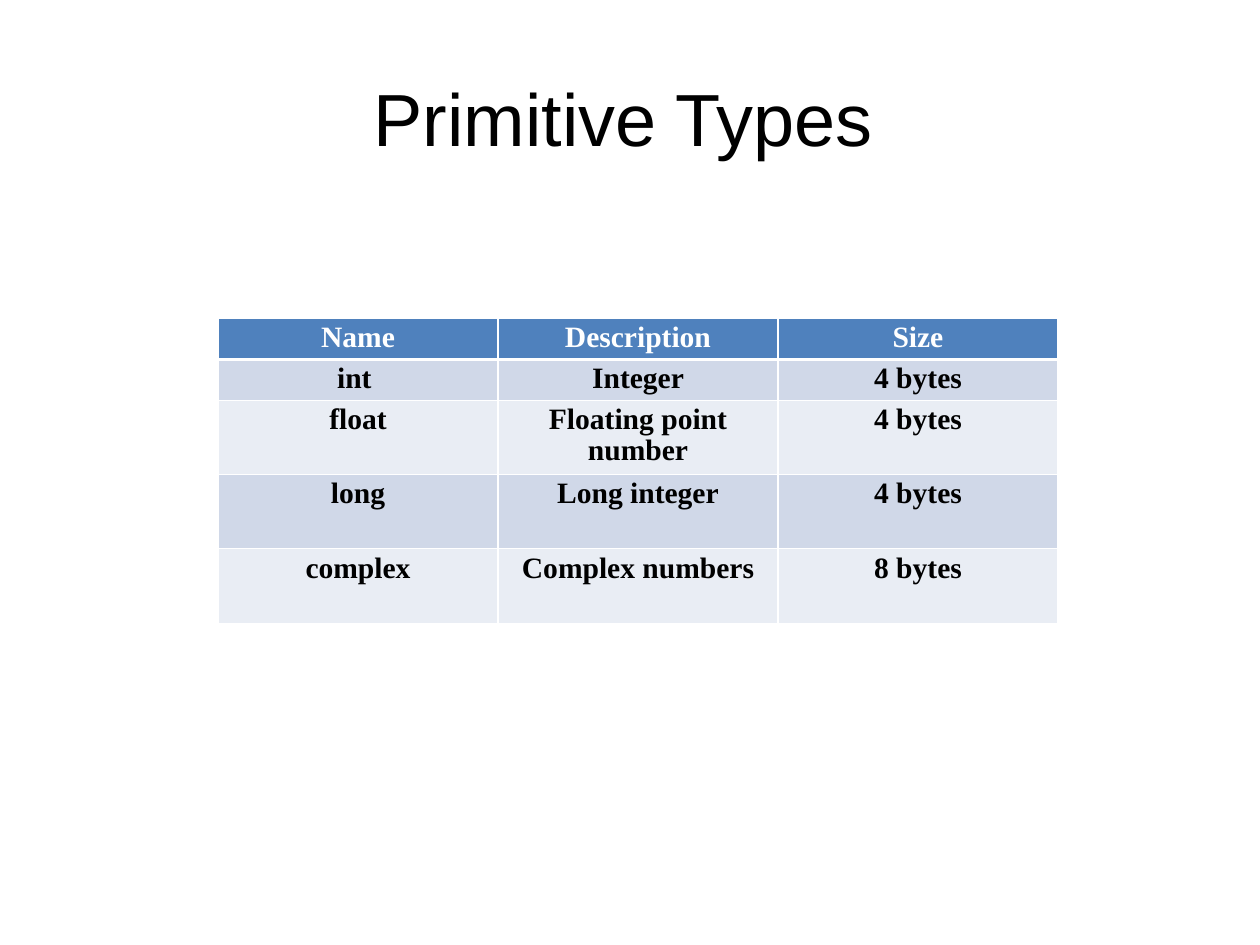
import pptx
import pptx.dml.color
import pptx.enum.text
import pptx.oxml
import pptx.oxml.ns
import pptx.util
from pptx.util import Cm

ROWS = [
    ("Name", "Description", "Size"),
    ("int ", "Integer", "4 bytes"),
    ("float", "Floating point number", "4 bytes"),
    ("long", "Long integer", "4 bytes"),
    ("complex", "Complex numbers", "8 bytes"),
]
ROW_HEIGHTS = [1.18, 1.18, 2.13, 2.13, 2.13]


def rgb(value):
    """Return the colour for a hex string."""
    return pptx.dml.color.RGBColor.from_string(value)


def write(tf, text, font="Times New Roman", size=24, color="000000", bold=False, spacing=None):
    """Fill a text frame with one centred, formatted paragraph."""
    p = tf.paragraphs[0]
    p.alignment = pptx.enum.text.PP_ALIGN.CENTER
    p.line_spacing = spacing
    r = p.add_run()
    r.text = text
    r.font.name = font
    r.font.size = pptx.util.Pt(size)
    r.font.bold = bold
    r.font.color.rgb = rgb(color)


def set_borders(cell, bottom=1, top=1):
    """Draw white borders round a cell, with widths in points."""
    tcPr = cell._tc.get_or_add_tcPr()
    widths = {"lnL": 1, "lnR": 1, "lnT": top, "lnB": bottom}
    for i, (tag, width) in enumerate(widths.items()):
        tcPr.insert(i, pptx.oxml.parse_xml(
            f'<a:{tag} {pptx.oxml.ns.nsdecls("a")} w="{pptx.util.Pt(width)}">'
            f'<a:solidFill><a:srgbClr val="FFFFFF"/></a:solidFill></a:{tag}>'))


def add_title(s, text, left, top, width, height):
    """Place the title placeholder in the given box."""
    sp = s.shapes.title
    sp.left, sp.top, sp.width, sp.height = left, top, width, height
    tf = sp.text_frame
    tf.word_wrap = True
    tf.vertical_anchor = pptx.enum.text.MSO_ANCHOR.MIDDLE
    write(tf, text, font="Arial", size=60)


def add_types_table(s, left, top, width, height):
    """Add the table of primitive types in the given box."""
    table = s.shapes.add_table(len(ROWS), len(ROWS[0]), left, top, width, height).table
    for row, row_height in zip(table.rows, ROW_HEIGHTS):
        row.height = Cm(row_height)
    for i, texts in enumerate(ROWS):
        header = i == 0
        fill = "4F81BD" if header else ("E9EDF4", "D0D8E8")[i % 2]
        for j, text in enumerate(texts):
            cell = table.cell(i, j)
            cell.fill.solid()
            cell.fill.fore_color.rgb = rgb(fill)
            set_borders(cell, bottom=3 if header else 1, top=3 if i == 1 else 1)
            write(cell.text_frame, text, color="FFFFFF" if header else "000000",
                  bold=True, spacing=0.95)


def main():
    """Build and save the slide."""
    prs = pptx.Presentation()
    prs.slide_width, prs.slide_height = Cm(36.12), Cm(27.1)
    s = prs.slides.add_slide(prs.slide_layouts[5])
    add_title(s, "Primitive Types", Cm(8.66), Cm(1.14), Cm(18.42), Cm(4.45))
    add_types_table(s, Cm(6.25), Cm(9.12), Cm(24.08), Cm(sum(ROW_HEIGHTS)))
    prs.save("out.pptx")


if __name__ == "__main__":
    main()
